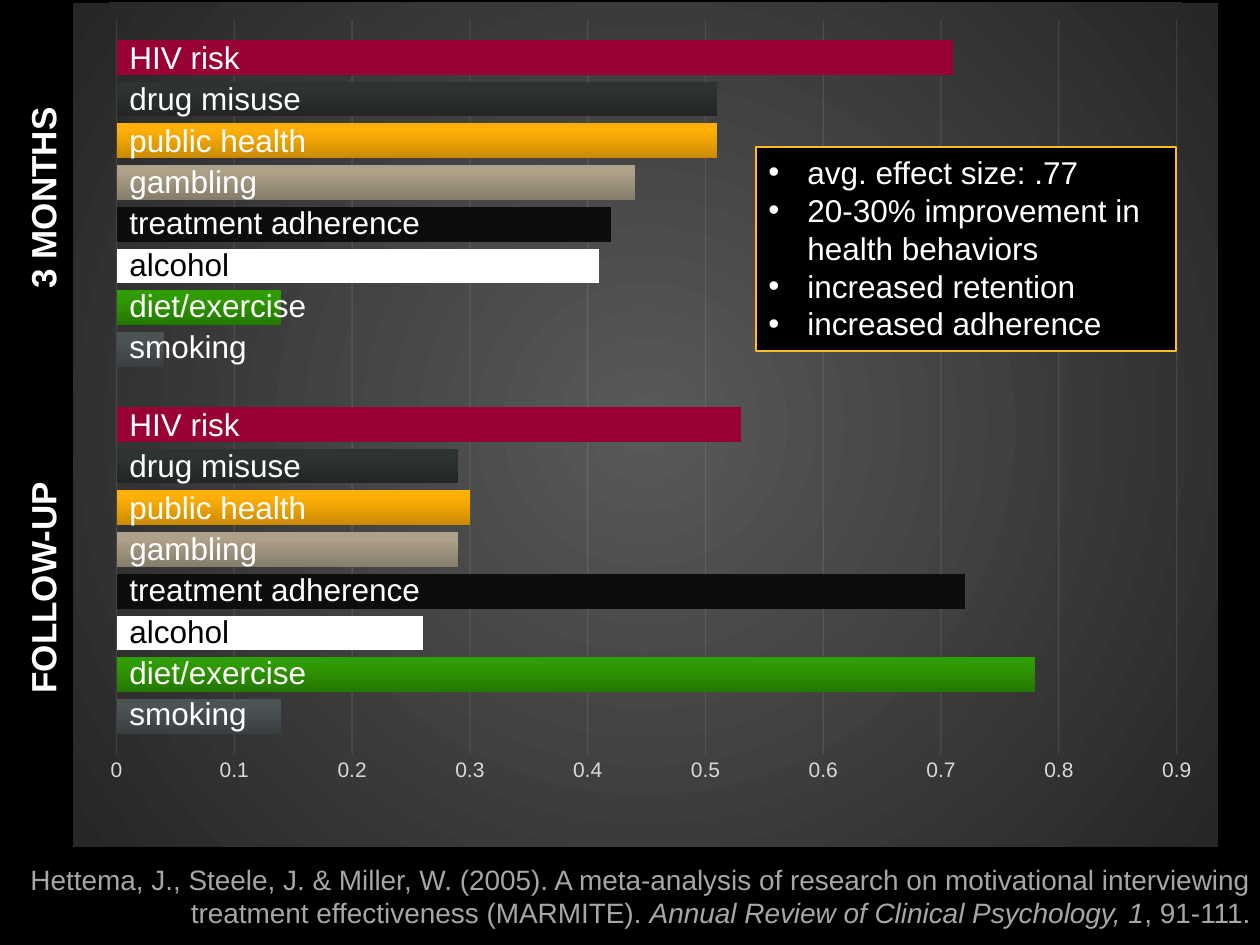
import pptx
import pptx.chart.data
import pptx.dml.color
import pptx.enum.chart
import pptx.enum.shapes
import pptx.enum.text
import pptx.oxml
import pptx.oxml.ns
import pptx.util

PX = 914400 // 126
FONT = "Arial"
INK = {"black": "000000", "white": "FFFFFF", "cite": "A6A6A6", "axis": "D9D9D9",
       "grid": "F2F2F2", "edge": "FFBB28"}
rgb = pptx.dml.color.RGBColor.from_string
NS = pptx.oxml.ns.nsdecls("a", "c")


def write(para, text, size, ink="white", bold=False, slant=False):
    """Add one run to a paragraph."""
    run = para.add_run()
    run.text = text
    run.font.name = FONT
    run.font.size = pptx.util.Pt(size)
    run.font.bold = bold
    run.font.italic = slant
    run.font.color.rgb = rgb(INK[ink])


def blend(stops, course):
    """Return a gradient fill; stops are (percent, colour) pairs."""
    marks = "".join(f'<a:gs pos="{at * 1000}"><a:srgbClr val="{hue}"/></a:gs>'
                    for at, hue in stops)
    return pptx.oxml.parse_xml(
        f"<a:gradFill {NS} rotWithShape=\"1\"><a:gsLst>{marks}</a:gsLst>{course}</a:gradFill>")


deck = pptx.Presentation()
deck.slide_width = 1260 * PX
deck.slide_height = 945 * PX
slide = deck.slides.add_slide(deck.slide_layouts[6])
slide.background.fill.solid()
slide.background.fill.fore_color.rgb = rgb(INK["black"])

# Effect sizes, from the bottom bar up: label, follow-up, 3 months, colours
bars = [
    ("smoking", 0.14, 0.04, ["3A4042", "4B5355", "4C5356"]),
    ("diet/exercise", 0.78, 0.14, ["247801", "2F9B02", "2F9E00"]),
    ("alcohol", 0.26, 0.41, ["FFFFFF"]),
    ("treatment adherence", 0.72, 0.42, ["0D0D0D"]),
    ("gambling", 0.29, 0.44, ["867C6B", "AEA18A", "AFA28A"]),
    ("public health", 0.3, 0.51, ["CA8A00", "FFB008", "FFB109"]),
    ("drug misuse", 0.29, 0.51, ["232627", "2D3233", "2D3234"]),
    ("HIV risk", 0.53, 0.71, ["990033"]),
]
data = pptx.chart.data.CategoryChartData()
data.categories = ["1", "2"]
for num, (label, late, soon, hues) in enumerate(bars, 1):
    data.add_series(f"Series {num}", (late, soon))
chart = slide.shapes.add_chart(pptx.enum.chart.XL_CHART_TYPE.BAR_CLUSTERED,
                               73 * PX, 3 * PX, 1145 * PX, 844 * PX, data).chart
chart.has_legend = False
chart.has_title = False
chart.font.name = FONT
chart.font.size = pptx.util.Pt(10)
chart.font.color.rgb = rgb(INK["black"])

plot = chart.plots[0]
plot.gap_width = 115
plot.overlap = -20
plot.vary_by_categories = False
for series, (label, late, soon, hues) in zip(plot.series, bars):
    series.invert_if_negative = False
    if len(hues) == 1:
        series.format.fill.solid()
        series.format.fill.fore_color.rgb = rgb(hues[0])
    else:
        props = series._element.get_or_add_spPr()
        props.insert(0, blend(zip((0, 80, 100), hues),
                              '<a:lin ang="16200000" scaled="0"/>'))

chart.category_axis.visible = False
axis = chart.value_axis
axis.minimum_scale = 0
axis.maximum_scale = 0.9
axis.major_unit = 0.1
axis.major_tick_mark = pptx.enum.chart.XL_TICK_MARK.NONE
axis.format.line.fill.background()
axis.tick_labels.font.name = FONT
axis.tick_labels.font.size = pptx.util.Pt(12)
axis.tick_labels.font.color.rgb = rgb(INK["axis"])
axis.has_major_gridlines = True
grid = axis.major_gridlines.format.line
grid.width = pptx.util.Pt(0.75)
grid.color.rgb = rgb(INK["grid"])
tint = axis.major_gridlines._xAx.find(".//" + pptx.oxml.ns.qn("c:majorGridlines"))
for hue in tint.iter(pptx.oxml.ns.qn("a:srgbClr")):
    hue.append(pptx.oxml.parse_xml(f'<a:alpha {NS} val="10000"/>'))

# Chart ground and plot area
ground = pptx.oxml.parse_xml(f"<c:spPr {NS}><a:ln><a:noFill/></a:ln></c:spPr>")
ground.insert(0, blend([(0, "595959"), (100, "262626")],
                       '<a:path path="circle"><a:fillToRect l="50000" t="50000" '
                       'r="50000" b="50000"/></a:path>'))
space = chart._chartSpace
space.find(pptx.oxml.ns.qn("c:txPr")).addprevious(ground)
area = space.find(".//" + pptx.oxml.ns.qn("c:plotArea"))
for old in area.findall(pptx.oxml.ns.qn("c:layout")):
    area.remove(old)
rules = [("layoutTarget", "inner"), ("xMode", "edge"), ("yMode", "edge"),
         ("x", 0.038), ("y", 0.02), ("w", 0.926), ("h", 0.87)]
parts = "".join(f'<c:{name} val="{val}"/>' for name, val in rules)
area.insert(0, pptx.oxml.parse_xml(
    f"<c:layout {NS}><c:manualLayout>{parts}</c:manualLayout></c:layout>"))

# Citation
frame = slide.shapes.add_textbox(3 * PX, 856 * PX, 1260 * PX, 81 * PX).text_frame
frame.word_wrap = True
para = frame.paragraphs[0]
para.alignment = pptx.enum.text.PP_ALIGN.RIGHT
write(para, "Hettema, J., Steele, J. & Miller, W. (2005). A meta-analysis of research on "
      "motivational interviewing treatment effectiveness (MARMITE). ", 16, "cite")
write(para, "Annual Review of Clinical Psychology, 1", 16, "cite", slant=True)
write(para, ", 91-111.", 16, "cite")

# Bar labels and upright title of each group
for title, top, side in [("3 MONTHS", 32, 131), ("FOLLOW-UP", 399, 536)]:
    frame = slide.shapes.add_textbox(117 * PX, top * PX, 407 * PX, 343 * PX).text_frame
    frame.word_wrap = True
    for num, (label, *rest) in enumerate(reversed(bars)):
        para = frame.add_paragraph() if num else frame.paragraphs[0]
        para.space_after = pptx.util.Pt(2)
        write(para, label, 18, "black" if label == "alcohol" else "white")

    box = slide.shapes.add_textbox(-73 * PX, side * PX, 252 * PX, 63 * PX)
    box.rotation = 270
    frame = box.text_frame
    frame.word_wrap = True
    frame.margin_left = frame.margin_top = 0
    frame.paragraphs[0].space_before = pptx.util.Pt(4)
    write(frame.paragraphs[0], title, 20, bold=True)

# Summary box
box = slide.shapes.add_shape(pptx.enum.shapes.MSO_SHAPE.RECTANGLE,
                             756 * PX, 147 * PX, 420 * PX, 204 * PX)
box.shadow.inherit = False
box.fill.solid()
box.fill.fore_color.rgb = rgb(INK["black"])
box.line.color.rgb = rgb(INK["edge"])
box.line.width = pptx.util.Pt(0.75)
frame = box.text_frame
frame.word_wrap = True
frame.vertical_anchor = pptx.enum.text.MSO_ANCHOR.TOP
points = ["avg. effect size: .77", "20-30% improvement in health behaviors",
          "increased retention", "increased adherence"]
for num, point in enumerate(points):
    para = frame.add_paragraph() if num else frame.paragraphs[0]
    para.alignment = pptx.enum.text.PP_ALIGN.LEFT
    props = para._p.get_or_add_pPr()
    props.set("marL", str(39 * PX))
    props.set("indent", str(-39 * PX))
    props.append(pptx.oxml.parse_xml(f'<a:buFont {NS} typeface="{FONT}"/>'))
    props.append(pptx.oxml.parse_xml(f'<a:buChar {NS} char="•"/>'))
    write(para, point, 18)

deck.save("out.pptx")
